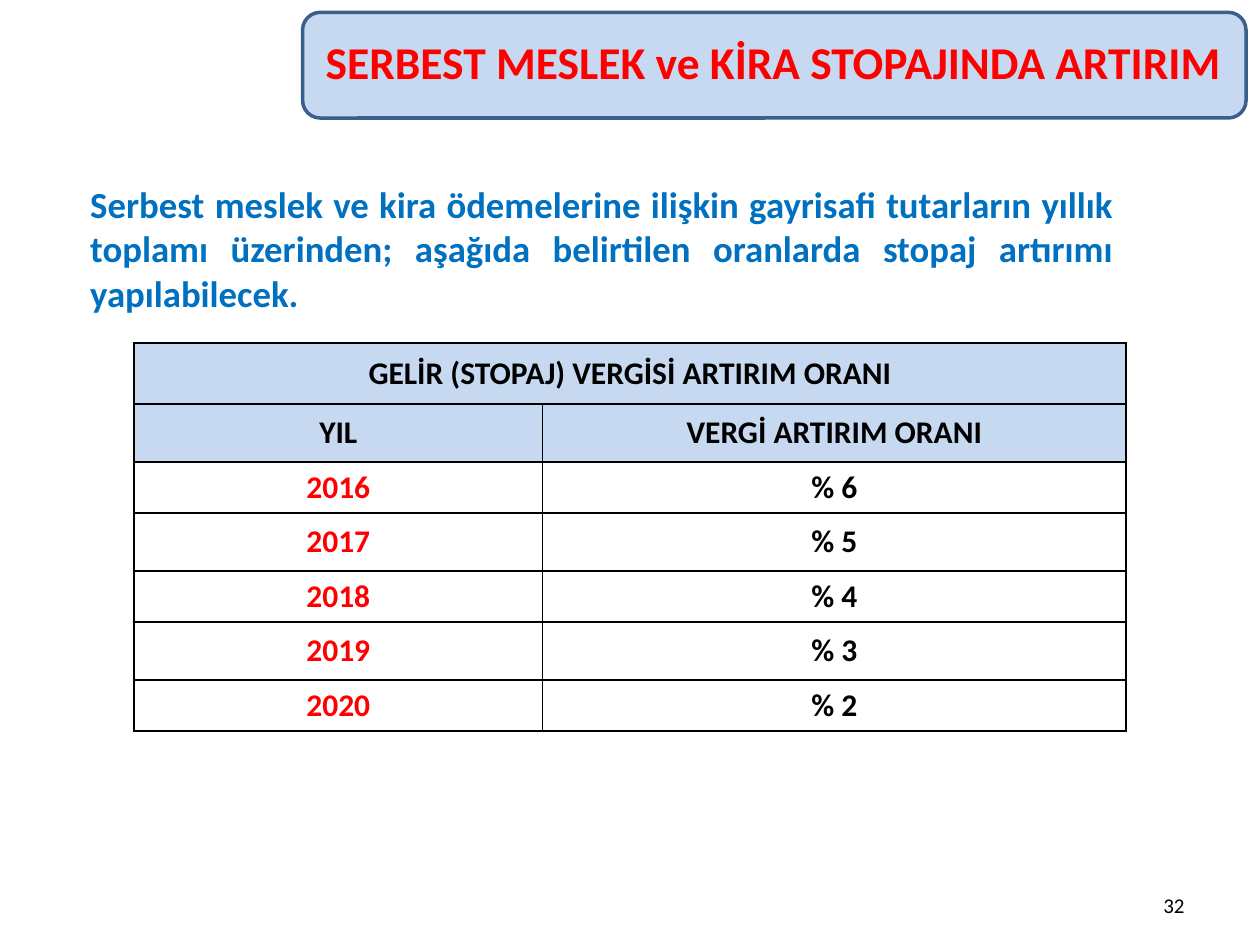
"""Build the slide on withholding tax increase rates."""
from lxml.etree import SubElement
from pptx import Presentation
from pptx.dml.color import RGBColor
from pptx.enum.shapes import MSO_SHAPE
from pptx.enum.text import MSO_ANCHOR, MSO_AUTO_SIZE, PP_ALIGN
from pptx.oxml.ns import qn
from pptx.util import Cm, Pt

BLACK = RGBColor(0x00, 0x00, 0x00)
RED = RGBColor(0xFF, 0x00, 0x00)
BLUE = RGBColor(0x00, 0x70, 0xC0)
PALE_BLUE = RGBColor(0xC6, 0xD9, 0xF1)
STEEL_BLUE = RGBColor(0x3A, 0x5F, 0x8C)

TABLE_TITLE = "GELİR (STOPAJ) VERGİSİ ARTIRIM ORANI"
TABLE_HEADINGS = ("YIL", "VERGİ ARTIRIM ORANI")
RATES = {"2016": "% 6", "2017": "% 5", "2018": "% 4", "2019": "% 3", "2020": "% 2"}
COLUMN_WIDTHS = (8.24, 11.76)
ROW_HEIGHTS = (1.23, 1.17, 1.03, 1.17, 1.03, 1.17, 1.03)


class SlideBuilder:
    def __init__(self, slide, font_name="Calibri"):
        self.slide = slide
        self.font_name = font_name

    def set_text(self, text_frame, text, size, color, alignment, bold=True):
        text_frame.text = text
        paragraph = text_frame.paragraphs[0]
        paragraph.alignment = alignment
        font = paragraph.runs[0].font
        font.name, font.size, font.bold = self.font_name, Pt(size), bold
        font.color.rgb = color

    def place_title(self, text, left, top, width, height):
        title = self.slide.shapes.title
        title.left, title.top, title.width, title.height = map(Cm, (left, top, width, height))
        text_frame = title.text_frame
        text_frame.auto_size = MSO_AUTO_SIZE.NONE
        text_frame.vertical_anchor = MSO_ANCHOR.MIDDLE
        text_frame.margin_left = text_frame.margin_right = 0
        self.set_text(text_frame, text, 26, RED, PP_ALIGN.CENTER)

    def add_banner(self, left, top, width, height):
        banner = self.slide.shapes.add_shape(
            MSO_SHAPE.ROUNDED_RECTANGLE, *map(Cm, (left, top, width, height)))
        banner.shadow.inherit = False
        banner.fill.solid()
        banner.fill.fore_color.rgb = PALE_BLUE
        banner.line.color.rgb = STEEL_BLUE
        banner.line.width = Pt(2)
        self.slide.shapes.title.element.addprevious(banner.element)

    def add_text(self, text, left, top, width, height, size, color, alignment, anchor, bold=True):
        box = self.slide.shapes.add_textbox(*map(Cm, (left, top, width, height)))
        box.text_frame.word_wrap = True
        box.text_frame.vertical_anchor = anchor
        self.set_text(box.text_frame, text, size, color, alignment, bold)

    def add_table(self, rows, left, top):
        table = self.slide.shapes.add_table(
            len(rows), len(COLUMN_WIDTHS), Cm(left), Cm(top),
            Cm(sum(COLUMN_WIDTHS)), Cm(sum(ROW_HEIGHTS))).table
        table.first_row = table.horz_banding = False
        for column, width in zip(table.columns, COLUMN_WIDTHS):
            column.width = Cm(width)
        for row, height in zip(table.rows, ROW_HEIGHTS):
            row.height = Cm(height)
        table.cell(0, 0).merge(table.cell(0, 1))
        for row_index, values in enumerate(rows):
            for column_index in range(len(COLUMN_WIDTHS)):
                self.format_cell(table.cell(row_index, column_index), is_heading=row_index < 2)
            for column_index, value in enumerate(values):
                is_year = row_index >= 2 and column_index == 0
                self.set_text(table.cell(row_index, column_index).text_frame, value, 18,
                              RED if is_year else BLACK, PP_ALIGN.CENTER)

    def format_cell(self, cell, is_heading):
        cell.vertical_anchor = MSO_ANCHOR.MIDDLE
        properties = cell._tc.get_or_add_tcPr()
        for side in ("a:lnL", "a:lnR", "a:lnT", "a:lnB"):
            border = SubElement(properties, qn(side), w=str(Pt(1)))
            fill = SubElement(border, qn("a:solidFill"))
            SubElement(fill, qn("a:srgbClr"), val=str(BLACK))
        if is_heading:
            cell.fill.solid()
            cell.fill.fore_color.rgb = PALE_BLUE
        else:
            cell.fill.background()


def main():
    presentation = Presentation()
    presentation.slide_width, presentation.slide_height = Cm(25.4), Cm(19.05)
    builder = SlideBuilder(presentation.slides.add_slide(presentation.slide_layouts[5]))
    builder.place_title("SERBEST MESLEK ve KİRA STOPAJINDA ARTIRIM", 6.3, 0.53, 18.6, 1.4)
    builder.add_banner(6.1, 0.25, 19.02, 2.13)
    builder.add_text("32", 18.2, 17.35, 5.93, 1.27, 12, BLACK,
                     PP_ALIGN.RIGHT, MSO_ANCHOR.BOTTOM, bold=False)
    builder.add_table([(TABLE_TITLE,), TABLE_HEADINGS, *RATES.items()], 2.7, 6.91)
    builder.add_text(
        "Serbest meslek ve kira ödemelerine ilişkin gayrisafi tutarların yıllık toplamı "
        "üzerinden; aşağıda belirtilen oranlarda stopaj artırımı yapılabilecek.",
        1.57, 3.53, 21.13, 2.95, 21, BLUE, PP_ALIGN.JUSTIFY, MSO_ANCHOR.MIDDLE)
    presentation.save("out.pptx")


if __name__ == "__main__":
    main()
